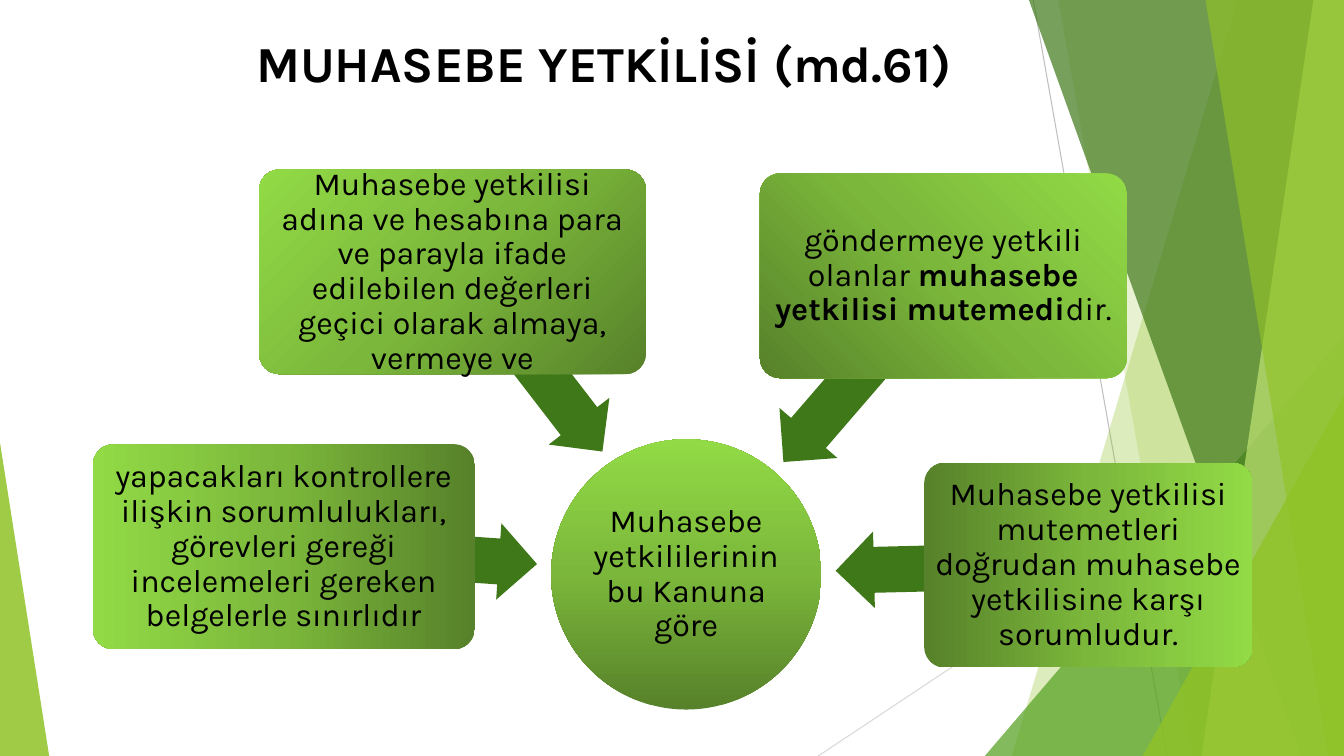
"""Build the slide on the accounting officer: four boxes pointing at a circle."""
from dataclasses import dataclass

from lxml.etree import SubElement
from pptx import Presentation
from pptx.dml.color import RGBColor
from pptx.enum.dml import MSO_FILL
from pptx.enum.shapes import MSO_CONNECTOR, MSO_SHAPE
from pptx.enum.text import MSO_ANCHOR, PP_ALIGN
from pptx.oxml import parse_xml
from pptx.oxml.ns import nsdecls, qn
from pptx.util import Cm, Pt

HUES = {
    "lime": "90C226", "green": "54A021", "forest": "3F7819", "pale": "C0E474",
    "moss": "57812A", "leaf": "7BB73B", "fresh": "92DA46",
    "gray": "BFBFBF", "mist": "D9D9D9", "black": "000000",
}
FONT = "Karla"
WIDE, HIGH = 33.87, 19.05
THICK = 1.93
TALL = 5.16


@dataclass
class Ray:
    start: tuple[float, float]
    end: tuple[float, float]
    hue: str


@dataclass
class Band:
    top: float
    base: float
    hue: str
    alpha: int


@dataclass
class Wedge:
    left: float
    top: float
    width: float
    tip: float
    hue: str
    alpha: int


@dataclass
class Arrow:
    left: float
    top: float
    width: float
    turn: float


@dataclass
class Run:
    text: str
    strong: bool = False


@dataclass
class Node:
    left: float
    top: float
    width: float
    height: float
    angle: int | None
    runs: list[Run]
    arrow: Arrow | None = None


RAYS = [
    Ray((26.04, 0), (29.41, HIGH), "gray"),
    Ray((WIDE, 10.24), (20.62, HIGH), "mist"),
]
FACETS = [
    Band(31.19, 25.5, "lime", 30),
    Band(26.67, 30.05, "lime", 20),
    Wedge(24.82, 8.46, 9.05, 1, "green", 72),
    Band(25.93, 32.79, "forest", 70),
    Band(33.1, 30.28, "pale", 70),
    Band(30.38, 33.48, "lime", 65),
    Wedge(28.8, 9.98, 5.07, 1, "lime", 80),
    Wedge(0, 11.15, 1.24, 0, "lime", 85),
]
NODES = [
    Node(13.89, 11.07, 6.81, 6.81, 270,
         [Run("Muhasebe yetkililerinin bu Kanuna göre")]),
    Node(2.34, 11.2, 9.63, TALL, 180,
         [Run("yapacakları kontrollere ilişkin sorumlulukları, görevleri gereği "
              "incelemeleri gereken belgelerle sınırlıdır")],
         Arrow(7.16, 13.03, 6.38, 183.9)),
    Node(6.53, 4.27, 9.75, TALL, 225,
         [Run("Muhasebe yetkilisi adına ve hesabına para ve parayla ifade "
              "edilebilen değerleri geçici olarak almaya, vermeye ve")],
         Arrow(10.44, 8.08, 5.89, 232.4)),
    Node(19.15, 4.37, 9.25, TALL, None,
         [Run("göndermeye yetkili olanlar "),
          Run("muhasebe yetkilisi mutemedi", True), Run("dir.")],
         Arrow(18.67, 8.33, 6.2, 310.8)),
    Node(23.29, 11.66, 8.28, TALL, 0,
         [Run("Muhasebe yetkilisi mutemetleri doğrudan muhasebe yetkilisine "
              "karşı sorumludur.")],
         Arrow(21.06, 13.34, 6.38, 358.6)),
]


def tint(name: str) -> RGBColor:
    return RGBColor.from_string(HUES[name])


def paint(shape, hue: str, alpha: int = 100) -> None:
    shape.shadow.inherit = False
    shape.line.fill.background()
    shape.fill.solid()
    shape.fill.fore_color.rgb = tint(hue)
    if alpha < 100:
        color = shape.fill._xPr.find(".//" + qn("a:srgbClr"))
        SubElement(color, qn("a:alpha"), val=str(alpha * 1000))


def blend(shape, angle: int | None) -> None:
    paint(shape, "leaf")
    stops = "".join(
        f'<a:gs pos="{spot * 1000}"><a:srgbClr val="{HUES[name]}"/></a:gs>'
        for spot, name in ((0, "moss"), (50, "leaf"), (100, "fresh")))
    if angle is None:
        course = ('<a:path path="circle"><a:fillToRect l="0" t="100000" '
                  'r="100000" b="0"/></a:path>')
    else:
        course = f'<a:lin ang="{angle * 60000}" scaled="0"/>'
    props = shape.fill._xPr
    props.replace(props.find(qn("a:solidFill")), parse_xml(
        f'<a:gradFill {nsdecls("a")} rotWithShape="1">'
        f'<a:gsLst>{stops}</a:gsLst>{course}</a:gradFill>'))


def write(par, run: Run, size: int) -> None:
    item = par.add_run()
    item.text = run.text
    item.font.name = FONT
    item.font.size = Pt(size)
    item.font.color.rgb = tint("black")
    item.font.bold = run.strong


def draw_ray(shapes, ray: Ray) -> None:
    ends = [Cm(v) for v in (*ray.start, *ray.end)]
    line = shapes.add_connector(MSO_CONNECTOR.STRAIGHT, *ends)
    line.line.color.rgb = tint(ray.hue)
    line.line.width = Pt(0.75)
    SubElement(line._element.spPr, qn("a:effectLst"))


def draw_facet(shapes, facet: Band | Wedge) -> None:
    if isinstance(facet, Band):
        pen = shapes.build_freeform(Cm(facet.top), 0)
        pen.add_line_segments([(Cm(WIDE), 0), (Cm(WIDE), Cm(HIGH)),
                               (Cm(facet.base), Cm(HIGH))])
        shape = pen.convert_to_shape()
    else:
        shape = shapes.add_shape(
            MSO_SHAPE.ISOSCELES_TRIANGLE, Cm(facet.left), Cm(facet.top),
            Cm(facet.width), Cm(HIGH - facet.top))
        shape.adjustments[0] = facet.tip
    paint(shape, facet.hue, facet.alpha)


def draw_arrow(shapes, arrow: Arrow) -> None:
    shape = shapes.add_shape(MSO_SHAPE.LEFT_ARROW, Cm(arrow.left),
                             Cm(arrow.top), Cm(arrow.width), Cm(THICK))
    shape.adjustments[0] = 0.6
    shape.rotation = arrow.turn
    paint(shape, "forest")


def draw_node(shapes, node: Node) -> None:
    if node.arrow:
        draw_arrow(shapes, node.arrow)
    kind = MSO_SHAPE.ROUNDED_RECTANGLE if node.arrow else MSO_SHAPE.OVAL
    shape = shapes.add_shape(kind, Cm(node.left), Cm(node.top),
                             Cm(node.width), Cm(node.height))
    if node.arrow:
        shape.adjustments[0] = 0.1
    blend(shape, node.angle)
    frame = shape.text_frame
    frame.word_wrap = True
    frame.vertical_anchor = MSO_ANCHOR.MIDDLE
    pad = Cm(0.12 if node.arrow else 0.05)
    frame.margin_left = frame.margin_right = pad
    frame.margin_top = frame.margin_bottom = pad
    par = frame.paragraphs[0]
    par.alignment = PP_ALIGN.CENTER
    par.line_spacing = 0.9
    for run in node.runs:
        write(par, run, 23)


def draw_title(shapes) -> None:
    box = shapes.add_textbox(Cm(3.28), Cm(0.69), Cm(23.88), Cm(3.66))
    box.text_frame.word_wrap = True
    par = box.text_frame.paragraphs[0]
    par.alignment = PP_ALIGN.CENTER
    write(par, Run("MUHASEBE YETKİLİSİ (md.61)", True), 36)


def main() -> None:
    deck = Presentation()
    deck.slide_width, deck.slide_height = Cm(WIDE), Cm(HIGH)
    shapes = deck.slides.add_slide(deck.slide_layouts[6]).shapes
    for ray in RAYS:
        draw_ray(shapes, ray)
    for facet in FACETS:
        draw_facet(shapes, facet)
    draw_title(shapes)
    for node in NODES:
        draw_node(shapes, node)
    deck.save("out.pptx")


if __name__ == "__main__":
    main()
